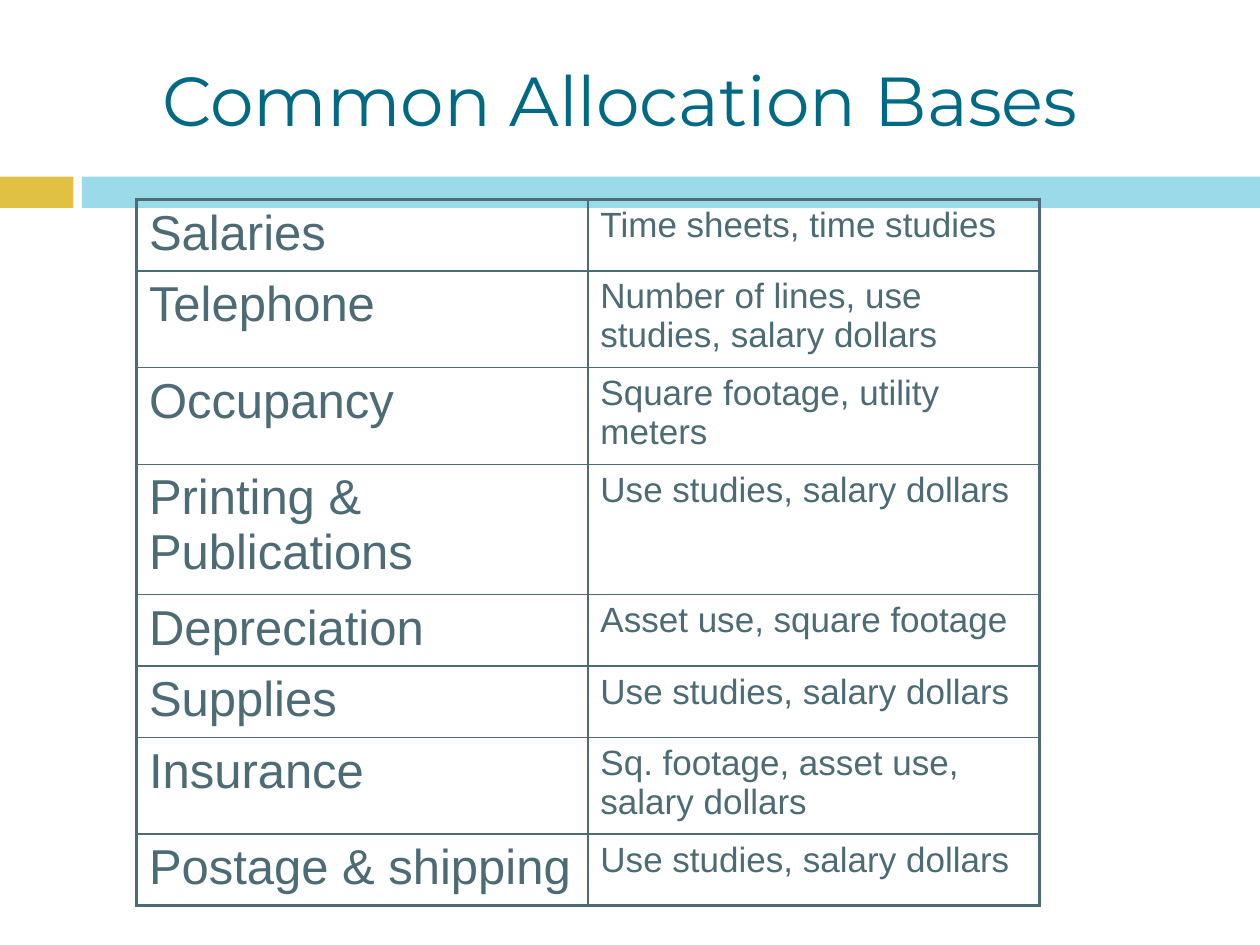
from lxml import etree
from pptx import Presentation
from pptx.dml.color import RGBColor
from pptx.enum.shapes import MSO_SHAPE
from pptx.enum.text import MSO_ANCHOR, PP_ALIGN
from pptx.oxml.ns import qn
from pptx.util import Cm, Pt

RECTANGLE = MSO_SHAPE.RECTANGLE
MIDDLE = MSO_ANCHOR.MIDDLE
CENTER = PP_ALIGN.CENTER

COLORS = {"gold": "E0C143", "sky": "9BDAE9", "teal": "006983", "slate": "4C6B74"}
TITLE_FORMAT = {"name": "Montserrat", "size": Pt(39.6)}
COLUMN_FORMATS = [
    {"name": "Arial", "size": Pt(28)},
    {"name": "Arial", "size": Pt(20)},
]
OUTER, INNER = Pt(2.25), Pt(1)
COLUMN_WIDTH = 9.1
SHORT, MEDIUM, TALL = 1.39, 1.89, 2.54

ALLOCATIONS = [
    ("Salaries", "Time sheets, time studies", SHORT),
    ("Telephone", "Number of lines, use studies, salary dollars", MEDIUM),
    ("Occupancy", "Square footage, utility meters", MEDIUM),
    ("Printing & Publications", "Use studies, salary dollars", TALL),
    ("Depreciation", "Asset use, square footage", SHORT),
    ("Supplies", "Use studies, salary dollars", SHORT),
    ("Insurance", "Sq. footage, asset use, salary dollars", MEDIUM),
    ("Postage & shipping", "Use studies, salary dollars", SHORT),
]


class SlideBuilder:
    """Holds the palette and the slide that receives each element."""

    def __init__(self, slide, colors):
        self.slide = slide
        self.colors = colors

    def rgb(self, color):
        return RGBColor.from_string(self.colors[color])

    def add_text(self, frame, text, color, formats):
        paragraph = frame.paragraphs[0]
        run = paragraph.add_run()
        run.text = text
        for attribute, value in formats.items():
            setattr(run.font, attribute, value)
        run.font.color.rgb = self.rgb(color)
        return paragraph

    def band(self, left, top, width, height, color):
        band = self.slide.shapes.add_shape(
            RECTANGLE, Cm(left), Cm(top), Cm(width), Cm(height))
        band.shadow.inherit = False
        band.fill.solid()
        band.fill.fore_color.rgb = self.rgb(color)
        band.line.fill.background()

    def title(self, left, top, width, height, text):
        frame = self.slide.shapes.add_textbox(
            Cm(left), Cm(top), Cm(width), Cm(height)).text_frame
        frame.word_wrap = True
        frame.vertical_anchor = MIDDLE
        self.add_text(frame, text, "teal", TITLE_FORMAT).alignment = CENTER

    def border(self, cell, side, width, color):
        properties = cell._tc.get_or_add_tcPr()
        line = etree.SubElement(properties, qn(f"a:ln{side}"), w=str(width))
        fill = etree.SubElement(line, qn("a:solidFill"))
        etree.SubElement(fill, qn("a:srgbClr"), val=self.colors[color])

    def table(self, left, top, rows):
        last_row, last_column = len(rows) - 1, len(COLUMN_FORMATS) - 1
        table = self.slide.shapes.add_table(
            len(rows), len(COLUMN_FORMATS), Cm(left), Cm(top),
            Cm(COLUMN_WIDTH * len(COLUMN_FORMATS)),
            Cm(sum(height for *_, height in rows))).table
        table.first_row = table.horz_banding = False
        for column in table.columns:
            column.width = Cm(COLUMN_WIDTH)
        for r, (*texts, height) in enumerate(rows):
            table.rows[r].height = Cm(height)
            for c, text in enumerate(texts):
                cell = table.cell(r, c)
                self.add_text(cell.text_frame, text, "slate", COLUMN_FORMATS[c])
                edges = {"L": c == 0, "R": c == last_column,
                         "T": r == 0, "B": r == last_row}
                for side, is_outer in edges.items():
                    self.border(cell, side, OUTER if is_outer else INNER, "slate")
                cell.fill.background()


def main():
    presentation = Presentation()
    presentation.slide_width, presentation.slide_height = Cm(25.4), Cm(19.05)
    slide = presentation.slides.add_slide(presentation.slide_layouts[6])
    builder = SlideBuilder(slide, COLORS)
    builder.band(0, 3.56, 1.48, 0.63, "gold")
    builder.band(1.65, 3.56, 23.75, 0.63, "sky")
    builder.title(1.07, 1.07, 22.86, 1.85, "Common Allocation Bases")
    builder.table(2.75, 4.02, ALLOCATIONS)
    presentation.save("out.pptx")


if __name__ == "__main__":
    main()
